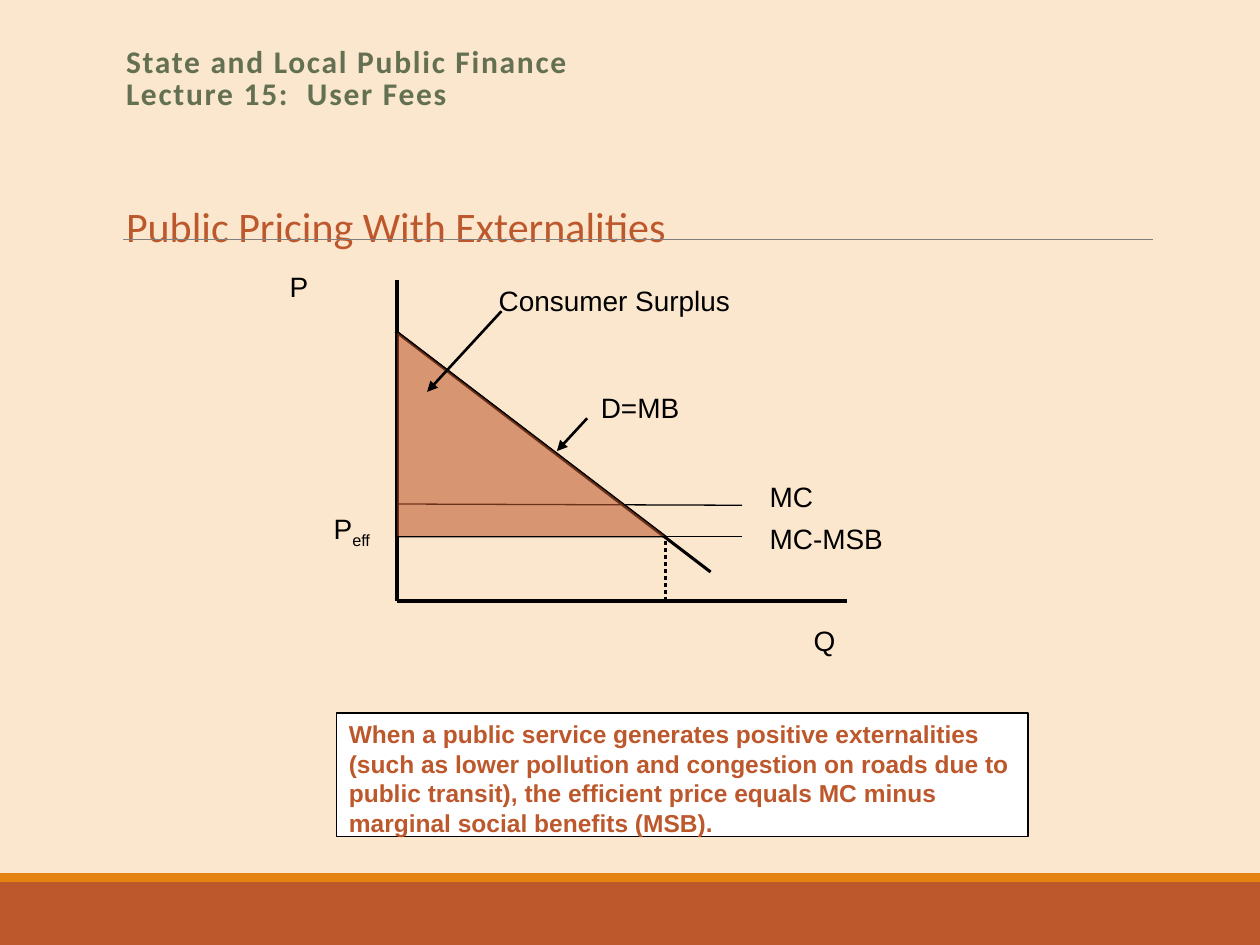
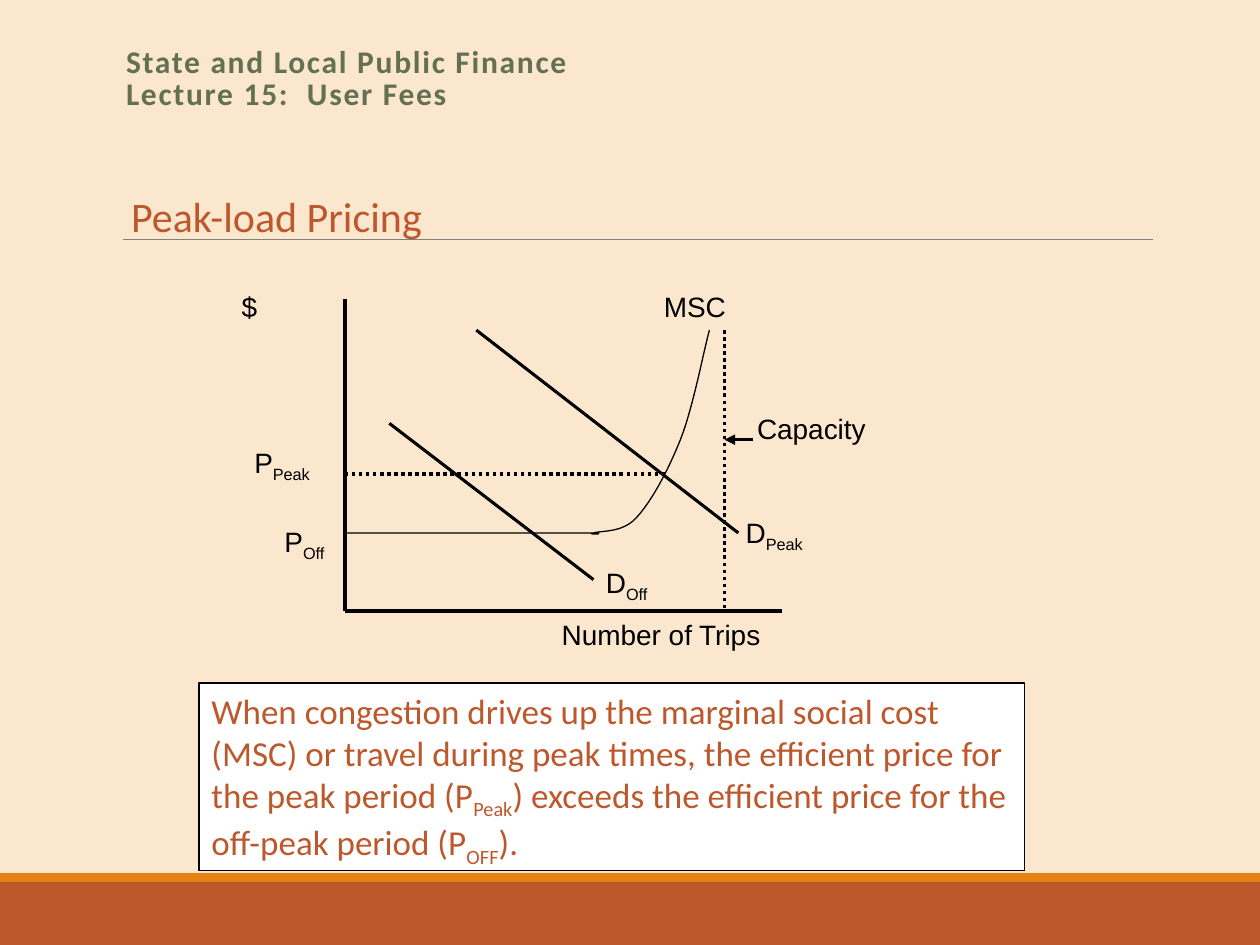
from dataclasses import dataclass
from typing import Protocol

from lxml import etree
from pptx import Presentation
from pptx import util as u
from pptx.dml.color import RGBColor
from pptx.enum import dml, shapes, text
from pptx.oxml import ns
from pptx.slide import Slide
from pptx.text.text import TextFrame

Point = tuple[float, float]
Box = tuple[float, float, float, float]


@dataclass(frozen=True)
class Style:
    font: str
    size: float
    ink: str
    bold: bool = False


@dataclass(frozen=True)
class Theme:
    back: str = "FBE6CE"
    rust: str = "BD582C"
    gold: str = "E48312"
    rule: str = "808080"
    ink: str = "000000"
    paper: str = "FFFFFF"
    head: Style = Style("Calibri", 18, "637052", True)
    topic: Style = Style("Calibri", 24, "BD582C")
    label: Style = Style("Arial", 16, "000000")
    bold: Style = Style("Arial", 14, "BD582C", True)
    plain: Style = Style("Calibri", 20, "BD582C")
    axis: float = 2
    slope: float = 1.75
    arrow: float = 1.5
    thin: float = 0.75


T = Theme()


def tint(code: str) -> RGBColor:
    return RGBColor.from_string(code)


def span(box: Box) -> list[u.Length]:
    return [u.Inches(n) for n in box]


def add_tag(node: etree._Element, tag: str, **keys: str) -> None:
    child = etree.SubElement(node, ns.qn(tag))
    for key, val in keys.items():
        child.set(key, val)


def write(frame: TextFrame, words: tuple[str, ...], style: Style) -> None:
    frame.word_wrap = True
    frame.auto_size = text.MSO_AUTO_SIZE.NONE
    frame.vertical_anchor = text.MSO_ANCHOR.TOP
    para = frame.paragraphs[0]
    para.alignment = text.PP_ALIGN.LEFT
    font = para.font
    font.name, font.size, font.bold = style.font, u.Pt(style.size), style.bold
    font.color.rgb = tint(style.ink)
    for i, word in enumerate(words):
        run = para.add_run()
        run.text = word
        if i % 2:
            run.font._element.set("baseline", "-25000")


def add_form(slide: Slide, kind: shapes.MSO_SHAPE, box: Box, fill: str, edge: str = ""):
    form = slide.shapes.add_shape(kind, *span(box))
    form.shadow.inherit = False
    form.fill.solid()
    form.fill.fore_color.rgb = tint(fill)
    if edge:
        form.line.color.rgb = tint(edge)
        form.line.width = u.Pt(T.thin)
    else:
        form.line.fill.background()
    return form


class Item(Protocol):
    def draw(self, slide: Slide) -> None: ...


@dataclass(frozen=True)
class Line:
    start: Point
    end: Point
    width: float
    dots: bool = False
    arrow: bool = False
    ink: str = T.ink

    def draw(self, slide: Slide) -> None:
        link = slide.shapes.add_connector(
            shapes.MSO_CONNECTOR.STRAIGHT, *span((*self.start, *self.end)))
        link.line.color.rgb = tint(self.ink)
        link.line.width = u.Pt(self.width)
        if self.dots:
            link.line.dash_style = dml.MSO_LINE.ROUND_DOT
        if self.arrow:
            add_tag(link._element.spPr.get_or_add_ln(), "a:tailEnd", type="triangle")
        add_tag(link._element.spPr, "a:effectLst")


@dataclass(frozen=True)
class Label:
    box: Box
    words: tuple[str, ...]

    def draw(self, slide: Slide) -> None:
        write(slide.shapes.add_textbox(*span(self.box)).text_frame, self.words, T.label)


@dataclass(frozen=True)
class Note:
    box: Box
    words: tuple[str, ...]
    style: Style

    def draw(self, slide: Slide) -> None:
        form = add_form(slide, shapes.MSO_SHAPE.RECTANGLE, self.box, T.paper, T.ink)
        write(form.text_frame, self.words, self.style)


@dataclass(frozen=True)
class Wedge:
    box: Box
    alpha: int

    def draw(self, slide: Slide) -> None:
        form = add_form(slide, shapes.MSO_SHAPE.RIGHT_TRIANGLE, self.box, T.rust, T.ink)
        fill = form._element.spPr.find(".//" + ns.qn("a:srgbClr"))
        add_tag(fill, "a:alpha", val=str(self.alpha * 1000))


@dataclass(frozen=True)
class Curve:
    start: Point
    bends: tuple[tuple[Point, Point, Point], ...]
    steps: int = 12

    def trace(self) -> list[Point]:
        dots, a = [], self.start
        for b, c, d in self.bends:
            for i in range(1, self.steps + 1):
                t = i / self.steps
                s = 1 - t
                dots.append(tuple(
                    s**3 * p + 3 * s * s * t * q + 3 * s * t * t * r + t**3 * v
                    for p, q, r, v in zip(a, b, c, d)))
            a = d
        return dots

    def draw(self, slide: Slide) -> None:
        pen = slide.shapes.build_freeform(*(u.Inches(n) for n in self.start))
        pen.add_line_segments(
            [(u.Inches(x), u.Inches(y)) for x, y in self.trace()], close=False)
        form = pen.convert_to_shape()
        form.shadow.inherit = False
        form.fill.background()
        form.line.color.rgb = tint(T.ink)
        form.line.width = u.Pt(T.thin)


@dataclass(frozen=True)
class Page:
    topic: str
    box: Box
    pad: float
    space: float
    items: tuple[Item, ...]


def add_head(slide: Slide) -> None:
    head = slide.shapes.title
    head.left, head.top, head.width, head.height = span((0.9, 0.33, 8.25, 0.65))
    write(head.text_frame, (), T.head)
    para = head.text_frame.paragraphs[0]
    para.line_spacing = 0.85
    para.add_run().text = "State and Local Public Finance"
    para.add_line_break()
    para.add_run().text = "Lecture 15:  User Fees"
    para._p.get_or_add_pPr().get_or_add_defRPr().set("spc", "100")


def add_topic(slide: Slide, page: Page) -> None:
    body = slide.placeholders[1]
    body.left, body.top, body.width, body.height = span(page.box)
    frame = body.text_frame
    frame.margin_left = frame.margin_right = u.Inches(page.pad)
    write(frame, (page.topic,), T.topic)
    para = frame.paragraphs[0]
    para.line_spacing = page.space
    para.space_before = u.Pt(0)
    props = para._p.get_or_add_pPr()
    props.set("marL", "0")
    props.set("indent", "0")
    props.insert_element_before(
        etree.SubElement(props, ns.qn("a:buNone")), "a:tabLst", "a:defRPr", "a:extLst")


def add_page(deck, page: Page) -> None:
    slide = deck.slides.add_slide(deck.slide_layouts[1])
    slide.background.fill.solid()
    slide.background.fill.fore_color.rgb = tint(T.back)
    for box, ink in (((0, 7, 10, 0.5), T.rust), ((0, 6.93, 10, 0.07), T.gold)):
        add_form(slide, shapes.MSO_SHAPE.RECTANGLE, box, ink)
    Line((0.98, 1.9), (9.15, 1.9), 0.5, ink=T.rule).draw(slide)
    add_head(slide)
    add_topic(slide, page)
    for item in page.items:
        item.draw(slide)


PAGES = (
    Page("Public Pricing With Externalities", (0.9, 1.54, 5.06, 0.5), 0.1, 1.0, (
        Line((3.15, 2.22), (3.15, 4.77), T.axis),
        Line((3.15, 4.77), (6.72, 4.77), T.axis),
        Line((3.14, 2.63), (5.64, 4.54), T.slope),
        Label((2.2, 2.09, 0.36, 0.51), ("P",)),
        Label((6.36, 4.9, 0.36, 0.51), ("Q",)),
        Label((6.01, 3.76, 1.35, 0.38), ("MC",)),
        Label((4.67, 3.05, 1.19, 0.38), ("D=MB",)),
        Label((2.55, 4.01, 1.07, 0.77), ("P", "eff")),
        Note((2.67, 5.66, 5.49, 0.98), (
            "When a public service generates positive externalities (such as lower "
            "pollution and congestion on roads due to public transit), the efficient "
            "price equals MC minus marginal social benefits (MSB).",), T.bold),
        Line((5.28, 4.77), (5.28, 4.26), T.axis, dots=True),
        Line((4.66, 3.32), (4.42, 3.58), T.arrow, arrow=True),
        Line((3.15, 4), (5.89, 4.01), T.thin),
        Wedge((3.15, 2.63, 2.14, 1.63), 57),
        Label((3.86, 2.2, 2.39, 0.4), ("Consumer Surplus",)),
        Line((3.98, 2.47), (3.39, 3.11), T.arrow, arrow=True),
        Line((3.15, 4.26), (5.89, 4.26), T.thin),
        Label((6.01, 4.09, 1.35, 0.38), ("MC-MSB",)),
    )),
    Page("Peak-load Pricing", (1.04, 1.51, 8.25, 4.4), 0, 0.9, (
        Line((2.74, 2.37), (2.74, 4.85), T.axis),
        Line((2.74, 4.85), (6.21, 4.85), T.axis),
        Line((3.09, 3.36), (4.71, 4.6), T.slope),
        Label((1.82, 2.25, 0.35, 0.5), ("$",)),
        Label((4.36, 4.85, 2.08, 0.5), ("Number of Trips",)),
        Label((5.17, 2.25, 1.31, 0.37), ("MSC",)),
        Label((2.16, 4.11, 1.04, 0.75), ("P", "Off")),
        Note((1.58, 5.42, 6.55, 1.49), (
            "When congestion drives up the marginal social cost (MSC) or travel during "
            "peak times, the efficient price for the peak period (P", "Peak",
            ") exceeds the efficient price for the off-peak period (P", "OFF", ")."),
            T.plain),
        Line((3.78, 2.62), (5.86, 4.23), T.slope),
        Curve((2.74, 4.23), (
            ((3.5, 4.23), (4.26, 4.23), (4.59, 4.23)),
            ((4.92, 4.23), (4.63, 4.25), (4.71, 4.23)),
            ((4.78, 4.21), (4.94, 4.23), (5.05, 4.11)),
            ((5.17, 3.98), (5.3, 3.74), (5.4, 3.49)),
            ((5.5, 3.24), (5.59, 2.76), (5.63, 2.62)))),
        Label((4.71, 4.44, 1.31, 0.37), ("D", "Off")),
        Label((1.92, 3.49, 1.04, 0.75), ("P", "Peak")),
        Line((5.28, 3.76), (2.74, 3.76), T.axis, dots=True),
        Line((5.75, 2.62), (5.75, 4.85), T.axis, dots=True),
        Line((5.98, 3.49), (5.75, 3.49), T.axis, arrow=True),
        Label((5.91, 3.22, 1.31, 0.43), ("Capacity",)),
        Label((5.82, 4.04, 1.31, 0.37), ("D", "Peak")),
    )),
)


def main() -> None:
    deck = Presentation()
    deck.slide_width, deck.slide_height = u.Inches(10), u.Inches(7.5)
    for page in PAGES:
        add_page(deck, page)
    deck.save("out.pptx")


if __name__ == "__main__":
    main()
